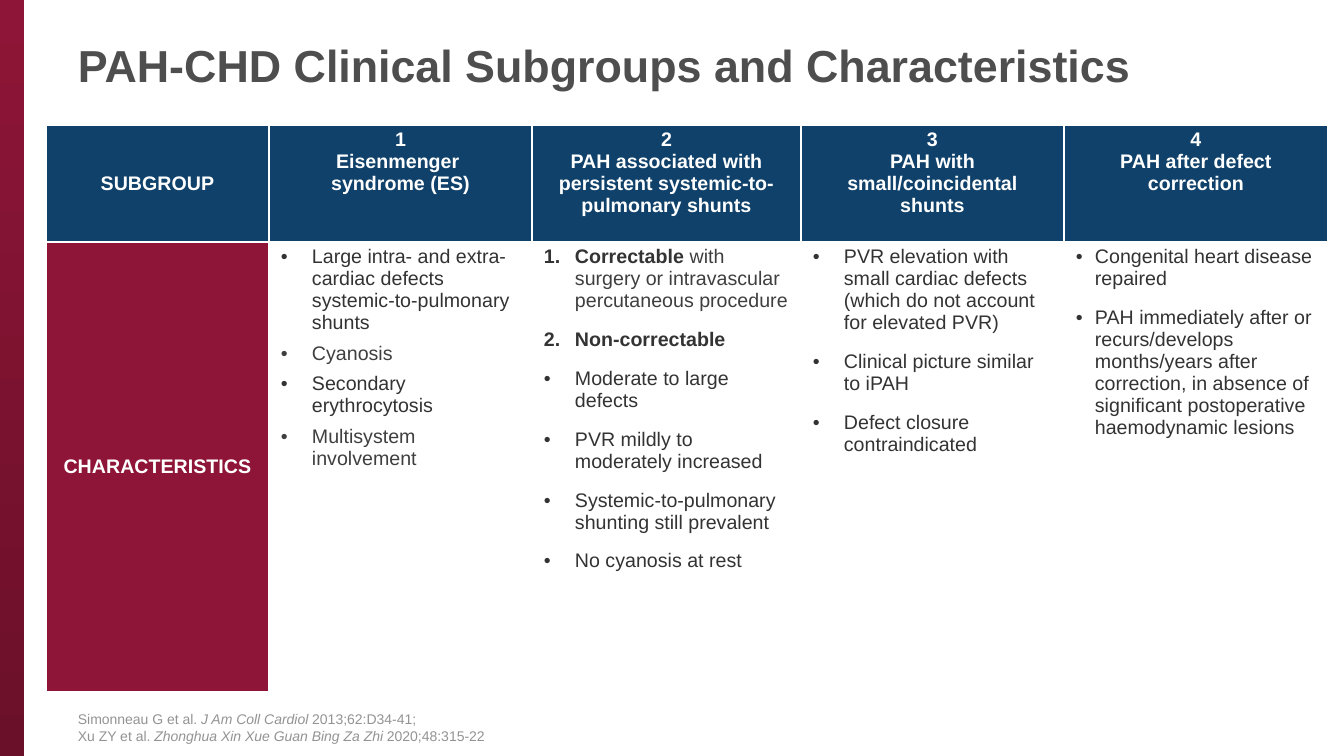
from lxml import etree
from pptx import Presentation
from pptx.dml.color import RGBColor
from pptx.enum.shapes import MSO_SHAPE
from pptx.enum.text import MSO_ANCHOR, PP_ALIGN
from pptx.oxml.ns import qn
from pptx.util import Emu, Pt

RECTANGLE = MSO_SHAPE.RECTANGLE
TOP, MIDDLE, BOTTOM = MSO_ANCHOR.TOP, MSO_ANCHOR.MIDDLE, MSO_ANCHOR.BOTTOM
CENTER = PP_ALIGN.CENTER

FONT = "Arial"
WHITE = RGBColor(0xFF, 0xFF, 0xFF)
NAVY = RGBColor(0x10, 0x41, 0x6A)
CRIMSON = RGBColor(0x8E, 0x15, 0x37)
DARK_CRIMSON = RGBColor(0x6B, 0x10, 0x29)
TITLE_GREY = RGBColor(0x4D, 0x4E, 0x4D)
DARK = RGBColor(0x33, 0x33, 0x33)
SOFT = RGBColor(0x3F, 0x3F, 0x3F)
SOURCE_GREY = RGBColor(0x93, 0x93, 0x93)

TITLE = "PAH-CHD Clinical Subgroups and Characteristics"
HEADERS = [
    "SUBGROUP",
    "1\nEisenmenger \vsyndrome (ES)",
    "2\nPAH associated with persistent systemic-to-pulmonary shunts",
    "3\nPAH with small/coincidental shunts",
    "4\nPAH after defect correction",
]
ROW_LABEL = "CHARACTERISTICS"
# Each column: indent in px, space before in points, numbered items, bulleted items.
# Each item is a list of (text, colour, bold) runs.
CHARACTERISTICS = [
    (31, 6, [], [
        [("Large intra- and extra-cardiac defects systemic-to-pulmonary shunts", DARK, False)],
        [("Cyanosis", SOFT, False)],
        [("Secondary erythrocytosis", DARK, False)],
        [("Multisystem involvement", SOFT, False)],
    ]),
    (31, 12, [
        [("Correctable ", DARK, True),
         ("with surgery or intravascular percutaneous procedure", SOFT, False)],
        [("Non-correctable", DARK, True)],
    ], [
        [("Moderate to large defects", DARK, False)],
        [("PVR mildly to moderately increased", DARK, False)],
        [("Systemic-to-pulmonary shunting still prevalent", DARK, False)],
        [("No cyanosis at rest", DARK, False)],
    ]),
    (31, 12, [], [
        [("PVR elevation with small cardiac defects (which do not account for elevated PVR)",
          DARK, False)],
        [("Clinical picture similar to iPAH", DARK, False)],
        [("Defect closure contraindicated", DARK, False)],
    ]),
    (19, 12, [], [
        [("Congenital heart disease repaired", DARK, False)],
        [("PAH immediately after or recurs/develops months/years after correction, "
          "in absence of significant postoperative haemodynamic lesions", DARK, False)],
    ]),
]
# Each reference: authors, journal (italic), issue.
REFERENCES = [
    ("Simonneau G et al. ", "J Am Coll Cardiol ", "2013;62:D34-41;"),
    ("Xu ZY et al. ", "Zhonghua Xin Xue Guan Bing Za Zhi ", "2020;48:315-22"),
]
COLUMN_WIDTHS = [223, 263, 269, 263, 264]
ROW_HEIGHTS = [117, 450]


def px(length):
    return Emu(round(length * 914400 / 100.8))


def set_font(font, size, color, bold=False):
    font.name, font.size, font.bold = FONT, Pt(size), bold
    font.color.rgb = color


def add_text_box(slide, left, top, width, height, anchor):
    box = slide.shapes.add_textbox(px(left), px(top), px(width), px(height))
    frame = box.text_frame
    frame.word_wrap = True
    frame.vertical_anchor = anchor
    return frame


def next_paragraph(frame, index):
    """Use the paragraph a frame starts with, then add more."""
    return frame.add_paragraph() if index else frame.paragraphs[0]


def format_cell(cell, fill, anchor):
    cell.margin_left = cell.margin_right = px(12)
    cell.margin_top = cell.margin_bottom = px(4)
    cell.vertical_anchor = anchor
    properties = cell._tc.get_or_add_tcPr()
    for side in ("lnL", "lnR", "lnT", "lnB"):
        line = etree.SubElement(properties, qn(f"a:{side}"), w=str(Pt(1)))
        solid = etree.SubElement(line, qn("a:solidFill"))
        etree.SubElement(solid, qn("a:srgbClr"), val=str(WHITE))
    if fill is None:
        cell.fill.background()
    else:
        cell.fill.solid()
        cell.fill.fore_color.rgb = fill


def fill_label(cell, text, fill, anchor):
    format_cell(cell, fill, anchor)
    cell.text_frame.text = text
    for paragraph in cell.text_frame.paragraphs:
        paragraph.alignment = CENTER
        set_font(paragraph.font, 14, WHITE, True)
        for run in paragraph.runs:
            set_font(run.font, 14, WHITE, True)


def set_marker(paragraph, indent, numbered):
    properties = paragraph._p.get_or_add_pPr()
    properties.set("marL", str(px(indent)))
    properties.set("indent", str(-px(indent)))
    if numbered:
        paragraph.level = 1
        etree.SubElement(properties, qn("a:buFont"), typeface="+mj-lt")
        etree.SubElement(properties, qn("a:buAutoNum"), type="arabicPeriod")
    else:
        etree.SubElement(properties, qn("a:buFont"), typeface=FONT)
        etree.SubElement(properties, qn("a:buChar"), char="•")


def fill_list(cell, indent, space_before, numbered_items, bulleted_items):
    format_cell(cell, None, TOP)
    for index, runs in enumerate(numbered_items + bulleted_items):
        paragraph = next_paragraph(cell.text_frame, index)
        paragraph.space_before = Pt(space_before)
        set_marker(paragraph, indent, index < len(numbered_items))
        for text, color, bold in runs:
            run = paragraph.add_run()
            run.text = text
            set_font(run.font, 14, color, bold)


def add_side_band(slide):
    band = slide.shapes.add_shape(RECTANGLE, px(-1), px(0), px(25), px(757))
    band.shadow.inherit = False
    band.line.fill.background()
    band.fill.gradient()
    band.fill.gradient_angle = 270
    for stop, color, position in zip(band.fill.gradient_stops, (CRIMSON, DARK_CRIMSON), (0, 1)):
        stop.color.rgb = color
        stop.position = position


def add_subgroup_table(slide):
    frame = slide.shapes.add_table(len(ROW_HEIGHTS), len(COLUMN_WIDTHS), px(46), px(125),
                                   px(sum(COLUMN_WIDTHS)), px(sum(ROW_HEIGHTS)))
    table = frame.table
    table.first_row = table.horz_banding = False
    for column, width in zip(table.columns, COLUMN_WIDTHS):
        column.width = px(width)
    for row, height in zip(table.rows, ROW_HEIGHTS):
        row.height = px(height)
    for index, header in enumerate(HEADERS):
        fill_label(table.cell(0, index), header, NAVY, TOP if index else MIDDLE)
    fill_label(table.cell(1, 0), ROW_LABEL, CRIMSON, MIDDLE)
    for index, characteristics in enumerate(CHARACTERISTICS, start=1):
        fill_list(table.cell(1, index), *characteristics)


def add_references(slide):
    frame = add_text_box(slide, 68, 701, 1184, 48, BOTTOM)
    for index, parts in enumerate(REFERENCES):
        paragraph = next_paragraph(frame, index)
        for part_index, text in enumerate(parts):
            run = paragraph.add_run()
            run.text = text
            set_font(run.font, 10, SOURCE_GREY)
            run.font.italic = part_index == 1


def main():
    presentation = Presentation()
    presentation.slide_width, presentation.slide_height = px(1344), px(756)
    slide = presentation.slides.add_slide(presentation.slide_layouts[6])
    add_side_band(slide)
    title = add_text_box(slide, 68, 22, 1184, 85, MIDDLE).paragraphs[0]
    title.text = TITLE
    set_font(title.font, 32, TITLE_GREY, True)
    add_subgroup_table(slide)
    add_references(slide)
    presentation.save("out.pptx")


if __name__ == "__main__":
    main()
